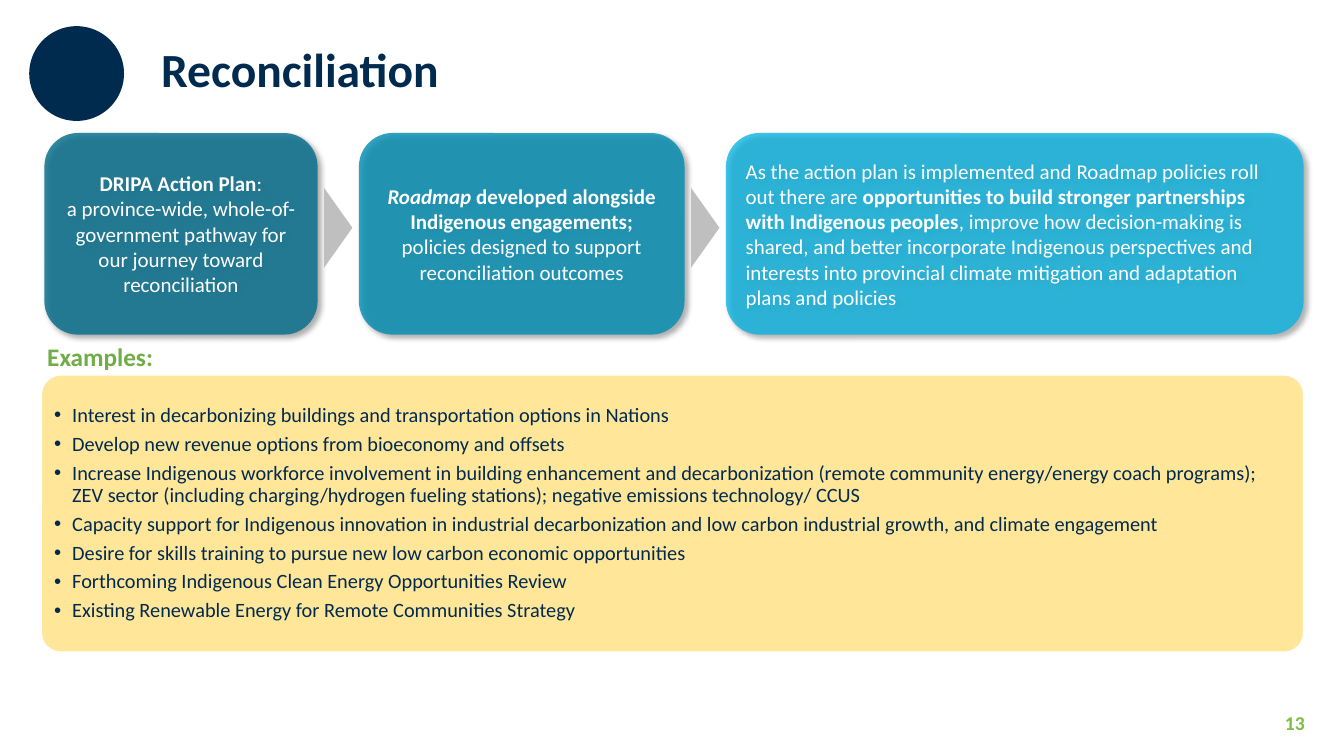
import pptx
import pptx.util
import pptx.dml.color
import pptx.enum.shapes
import pptx.enum.text
import pptx.oxml.ns
import lxml.etree

Inches = pptx.util.Inches
Pt = pptx.util.Pt
SHAPES = pptx.enum.shapes.MSO_SHAPE
ALIGN = pptx.enum.text.PP_ALIGN
ANCHOR = pptx.enum.text.MSO_ANCHOR
qn = pptx.oxml.ns.qn

COLORS = {
    "navy": "002A4E",
    "deep_teal": "006C8A",
    "teal": "008CB3",
    "sky": "00B2E2",
    "sand": "FFE699",
    "green": "70AD47",
    "lime": "7CBD42",
    "gray": "BFBFBF",
    "white": "FFFFFF",
    "black": "000000",
}

CARDS = [
    (0.44, 2.71, "deep_teal", 80, ALIGN.CENTER, [
        [("DRIPA Action Plan", "b"), (":", "")],
        [("a province-wide, whole-of-government pathway for our journey toward reconciliation", "")],
    ]),
    (3.56, 3.23, "teal", 80, ALIGN.CENTER, [
        [("Roadmap ", "bi"), ("developed alongside Indigenous engagements; ", "b"),
         ("policies designed to support reconciliation outcomes", "")],
    ]),
    (7.2, 5.73, "sky", 75, ALIGN.LEFT, [
        [("As the action plan is implemented and Roadmap policies roll out there are ", ""),
         ("opportunities to build stronger partnerships with Indigenous peoples", "b"),
         (", improve how decision-making is shared, and better incorporate Indigenous perspectives "
          "and interests into provincial climate mitigation and adaptation plans and policies", "")],
    ]),
]

EXAMPLES = [
    "Interest in decarbonizing buildings and transportation options in Nations",
    "Develop new revenue options from bioeconomy and offsets",
    "Increase Indigenous workforce involvement in building enhancement and decarbonization "
    "(remote community energy/energy coach programs); ZEV sector (including charging/hydrogen "
    "fueling stations); negative emissions technology/ CCUS",
    "Capacity support for Indigenous innovation in industrial decarbonization and low carbon "
    "industrial growth, and climate engagement",
    "Desire for skills training to pursue new low carbon economic opportunities",
    "Forthcoming Indigenous Clean Energy Opportunities Review",
    "Existing Renewable Energy for Remote Communities Strategy",
]


class SlideBuilder:
    font_name = "Calibri"

    def __init__(self, slide):
        self.slide = slide

    def color(self, name):
        return pptx.dml.color.RGBColor.from_string(COLORS[name])

    def style(self, paragraph, size, color, bold=None):
        paragraph.font.name = self.font_name
        paragraph.font.size = Pt(size)
        paragraph.font.color.rgb = self.color(color)
        paragraph.font.bold = bold

    def shape(self, kind, left, top, width, height, fill):
        shape = self.slide.shapes.add_shape(
            kind, Inches(left), Inches(top), Inches(width), Inches(height))
        shape.shadow.inherit = False
        shape.fill.solid()
        shape.fill.fore_color.rgb = self.color(fill)
        shape.line.fill.background()
        return shape

    def text(self, left, top, width, height, text, size, color,
             align=ALIGN.LEFT, anchor=ANCHOR.MIDDLE):
        box = self.slide.shapes.add_textbox(
            Inches(left), Inches(top), Inches(width), Inches(height))
        frame = box.text_frame
        frame.word_wrap = True
        frame.vertical_anchor = anchor
        paragraph = frame.paragraphs[0]
        paragraph.text = text
        paragraph.alignment = align
        paragraph.line_spacing = 0.9 if size > 30 else 1.0
        self.style(paragraph, size, color, True)

    def soften(self, shape, opacity):
        properties = shape._element.spPr
        fill_color = properties.find(qn("a:solidFill"))[0]
        lxml.etree.SubElement(fill_color, qn("a:alpha"), val=str(opacity * 1000))
        shadow = lxml.etree.SubElement(
            properties.find(qn("a:effectLst")), qn("a:outerShdw"),
            blurRad=str(Pt(4)), dist=str(Pt(3)), dir=str(45 * 60000),
            algn="tl", rotWithShape="0")
        shadow_color = lxml.etree.SubElement(shadow, qn("a:srgbClr"), val=COLORS["black"])
        lxml.etree.SubElement(shadow_color, qn("a:alpha"), val="40000")

    def card(self, left, width, fill, opacity, align, paragraphs):
        shape = self.shape(SHAPES.ROUNDED_RECTANGLE, left, 1.32, width, 2, fill)
        self.soften(shape, opacity)
        frame = shape.text_frame
        frame.word_wrap = True
        frame.vertical_anchor = ANCHOR.MIDDLE
        for index, pieces in enumerate(paragraphs):
            paragraph = frame.add_paragraph() if index else frame.paragraphs[0]
            paragraph.alignment = align
            self.style(paragraph, 15, "white")
            for text, emphasis in pieces:
                run = paragraph.add_run()
                run.text = text
                run.font.bold = "b" in emphasis
                run.font.italic = "i" in emphasis

    def arrow(self, center):
        width, height = 0.79, 0.28
        shape = self.shape(SHAPES.ISOSCELES_TRIANGLE, center - width / 2, 2.12,
                           width, height, "gray")
        shape.rotation = 90

    def bullet_panel(self, left, top, width, height, items):
        shape = self.shape(SHAPES.ROUNDED_RECTANGLE, left, top, width, height, "sand")
        shape.adjustments[0] = 0.07
        shape.line.color.rgb = self.color("white")
        shape.line.width = Pt(1)
        frame = shape.text_frame
        frame.word_wrap = True
        frame.vertical_anchor = ANCHOR.MIDDLE
        frame.margin_left = frame.margin_right = Inches(0.07)
        frame.margin_top = frame.margin_bottom = Inches(0.07)
        for index, item in enumerate(items):
            paragraph = frame.add_paragraph() if index else frame.paragraphs[0]
            paragraph.text = item
            paragraph.alignment = ALIGN.LEFT
            paragraph.line_spacing = 0.9
            paragraph.space_after = Pt(5)
            properties = paragraph._p.get_or_add_pPr()
            properties.set("marL", str(Inches(0.18)))
            properties.set("indent", str(-Inches(0.18)))
            lxml.etree.SubElement(properties, qn("a:buFont"), typeface="Arial")
            lxml.etree.SubElement(properties, qn("a:buChar"), char="•")
            self.style(paragraph, 14.5, "navy")


def main():
    presentation = pptx.Presentation()
    presentation.slide_width = Inches(13.33)
    presentation.slide_height = Inches(7.5)
    builder = SlideBuilder(presentation.slides.add_slide(presentation.slide_layouts[6]))

    builder.text(10.04, 6.97, 3, 0.4, "13", 14, "lime", ALIGN.RIGHT)
    builder.bullet_panel(0.41, 3.72, 12.52, 2.75, EXAMPLES)
    builder.text(1.5, 0.39, 11.14, 0.66, "Reconciliation", 34, "navy")
    builder.shape(SHAPES.OVAL, 0.29, 0.26, 0.94, 0.94, "navy")
    builder.text(0.37, 3.34, 3.58, 0.4, "Examples:", 18, "green", anchor=ANCHOR.TOP)
    for card in CARDS:
        builder.card(*card)
    for before, after in zip(CARDS, CARDS[1:]):
        builder.arrow((before[0] + before[1] + after[0]) / 2)

    presentation.save("out.pptx")


if __name__ == "__main__":
    main()
